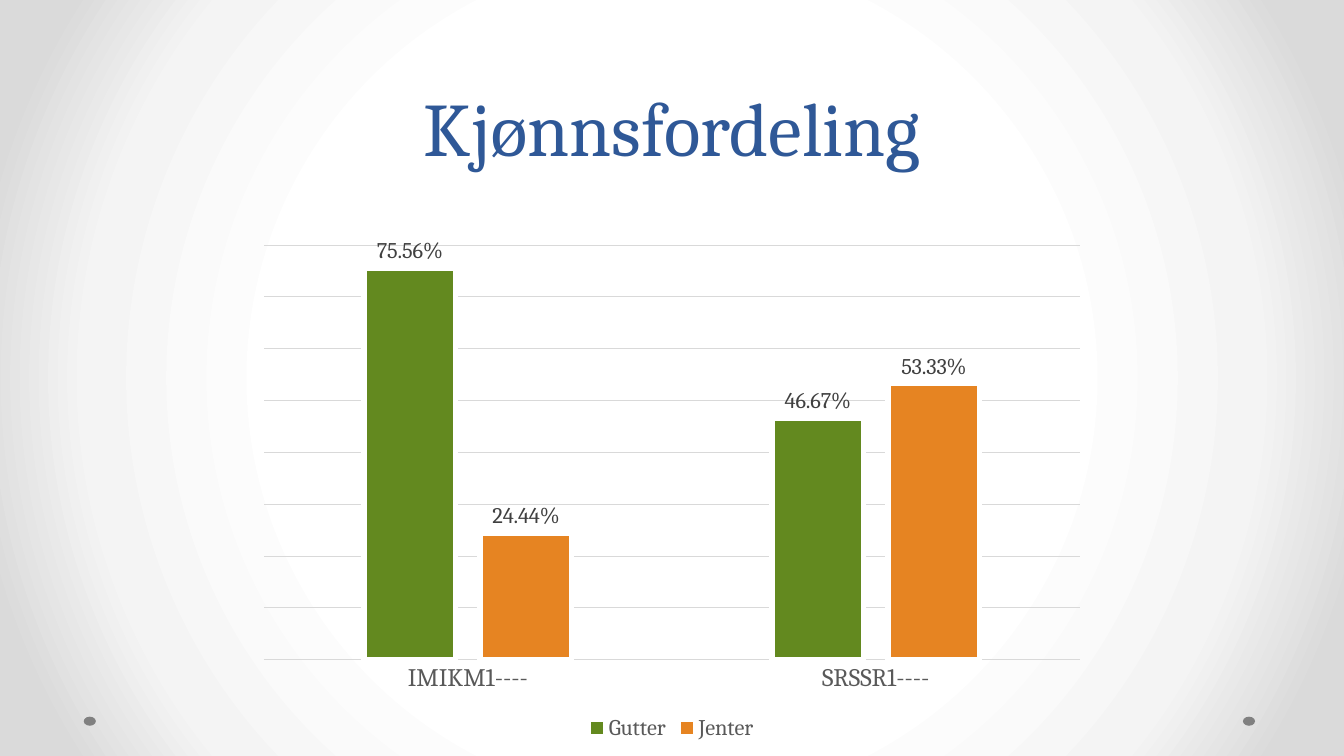
from lxml import etree
from pptx import Presentation
from pptx import util as u
from pptx.chart.data import CategoryChartData
from pptx.dml.color import RGBColor
from pptx.enum import chart as ch, shapes, text
from pptx.oxml import ns

Pt = u.Pt
FONT = "Cambria"


def rgb(value):
    return RGBColor.from_string(value)


def style_font(font, size, color):
    font.name = FONT
    font.size = Pt(size)
    font.color.rgb = rgb(color)


def style_line(line, color, width):
    line.color.rgb = rgb(color)
    line.width = Pt(width)


def set_background(s, stops):
    s.background.fill.gradient()
    grad = s.element.xpath(".//p:bgPr/a:gradFill")[0]
    for child in list(grad):
        grad.remove(child)
    gs_list = etree.SubElement(grad, ns.qn("a:gsLst"))
    for pos, color in stops:
        gs = etree.SubElement(gs_list, ns.qn("a:gs"), pos=str(pos * 1000))
        etree.SubElement(gs, ns.qn("a:srgbClr"), val=color)
    circle = etree.SubElement(grad, ns.qn("a:path"), path="circle")
    sides = dict.fromkeys("ltrb", "50000")
    etree.SubElement(circle, ns.qn("a:fillToRect"), **sides)


def add_dot(s, left):
    sp = s.shapes.add_shape(shapes.MSO_SHAPE.OVAL, Pt(left), Pt(511.9), Pt(8.64), Pt(6.5))
    sp.shadow.inherit = False
    sp.fill.solid()
    sp.fill.fore_color.rgb = rgb("808080")
    sp.line.fill.background()


def set_title(s, title):
    sp = s.shapes.title
    sp.left, sp.top, sp.width, sp.height = Pt(48), Pt(0), Pt(864), Pt(126)
    tf = sp.text_frame
    tf.text = title
    tf.word_wrap = True
    tf.auto_size = text.MSO_AUTO_SIZE.NONE
    tf.vertical_anchor = text.MSO_ANCHOR.BOTTOM
    p = tf.paragraphs[0]
    p.alignment = text.PP_ALIGN.CENTER
    p.line_spacing = Pt(58)
    style_font(p.runs[0].font, 54, "2F5897")


def style_series(series, color):
    series.format.fill.solid()
    series.format.fill.fore_color.rgb = rgb(color)
    style_line(series.format.line, "FFFFFF", 4)
    series.invert_if_negative = False
    labels = series.data_labels
    labels.show_value = True
    labels.number_format = "0.00%"
    labels.number_format_is_linked = False
    labels.position = ch.XL_LABEL_POSITION.OUTSIDE_END
    style_font(labels.font, 16, "404040")


def style_axes(chart):
    cat = chart.category_axis
    cat.major_tick_mark = ch.XL_TICK_MARK.NONE
    style_font(cat.tick_labels.font, 18, "595959")
    style_line(cat.format.line, "D9D9D9", 0.75)
    val = chart.value_axis
    val.visible = False
    val.minimum_scale, val.maximum_scale, val.major_unit = 0, 0.8, 0.1
    val.has_major_gridlines = True
    style_line(val.major_gridlines.format.line, "D9D9D9", 0.75)
    val.tick_labels.number_format = "0.00%"
    val.tick_labels.number_format_is_linked = False


def add_column_chart(s, categories, series):
    data = CategoryChartData(number_format="0.00%")
    data.categories = categories
    for name, values, _ in series:
        data.add_series(name, values)
    frame = s.shapes.add_chart(ch.XL_CHART_TYPE.COLUMN_CLUSTERED,
                               Pt(176.4), Pt(167.8), Pt(607), Pt(364.3), data)
    chart = frame.chart
    chart.has_title = False
    style_font(chart.font, 10, "000000")
    chart.has_legend = True
    chart.legend.position = ch.XL_LEGEND_POSITION.BOTTOM
    chart.legend.include_in_layout = False
    style_font(chart.legend.font, 16, "595959")
    style_axes(chart)
    plot = chart.plots[0]
    plot.vary_by_categories = False
    plot.gap_width = 219
    plot.overlap = -27
    for bars, (_, _, color) in zip(plot.series, series):
        style_series(bars, color)


def main():
    prs = Presentation()
    prs.slide_width, prs.slide_height = Pt(960), Pt(540)
    s = prs.slides.add_slide(prs.slide_layouts[5])
    set_background(s, [(50, "FFFFFF"), (76, "F4F4F4"), (92, "DADADA")])
    for left in (887.8, 59.8):
        add_dot(s, left)
    set_title(s, "Kjønnsfordeling")
    add_column_chart(s, ["IMIKM1----", "SRSSR1----"], [
        ("Gutter", (0.7556, 0.4667), "63891F"),
        ("Jenter", (0.2444, 0.5333), "E68422"),
    ])
    prs.save("out.pptx")


if __name__ == "__main__":
    main()
